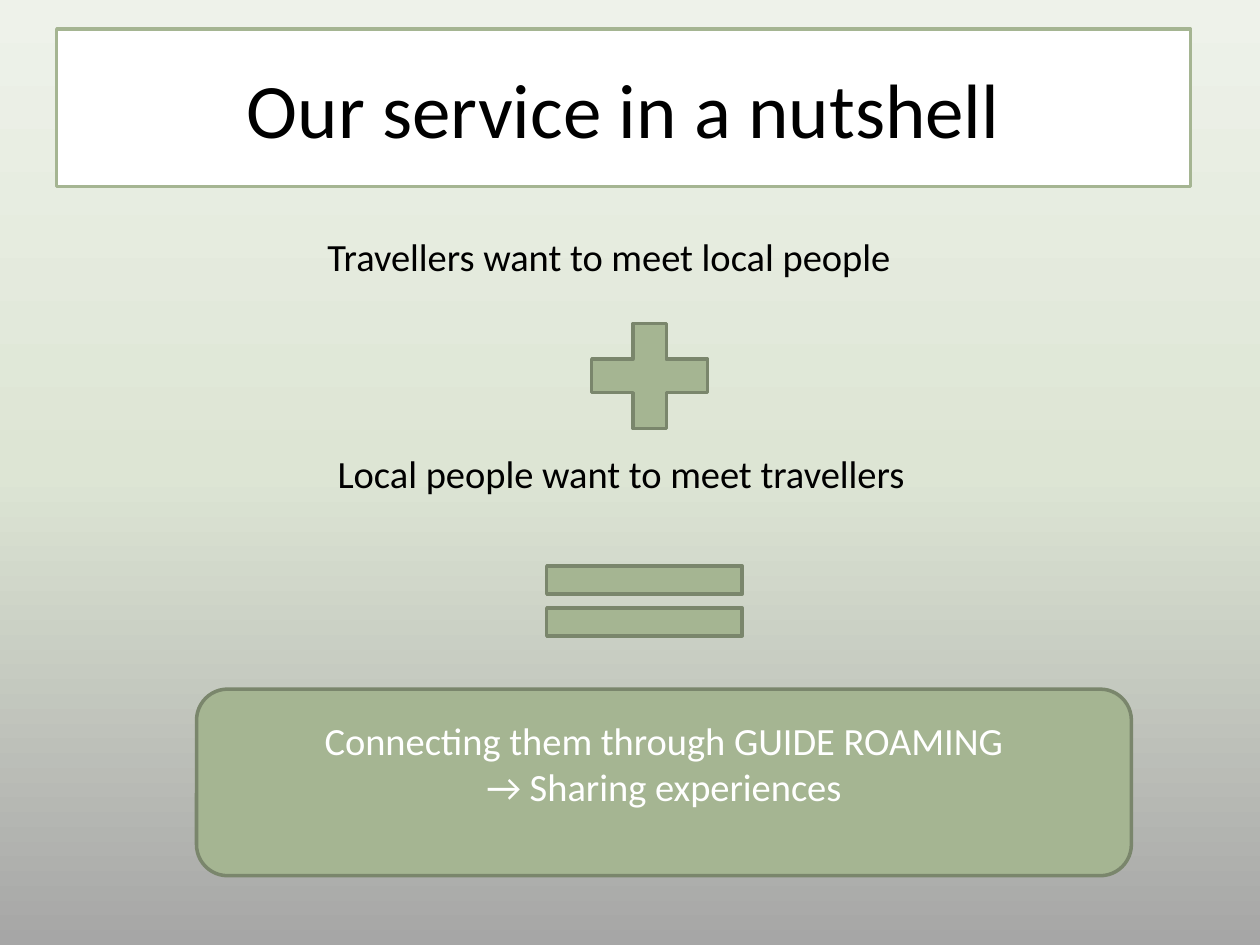
from copy import deepcopy
from dataclasses import dataclass

from pptx import Presentation
from pptx.dml.color import RGBColor
from pptx.enum.shapes import MSO_SHAPE
from pptx.enum.text import MSO_ANCHOR, MSO_AUTO_SIZE, PP_ALIGN
from pptx.util import Pt

PLUS, EQUALS = MSO_SHAPE.MATH_PLUS, MSO_SHAPE.MATH_EQUAL
ROUNDED = MSO_SHAPE.ROUNDED_RECTANGLE
LEFT, CENTER = PP_ALIGN.LEFT, PP_ALIGN.CENTER
MIDDLE, TOP = MSO_ANCHOR.MIDDLE, MSO_ANCHOR.TOP
GROW = MSO_AUTO_SIZE.SHAPE_TO_FIT_TEXT


@dataclass(frozen=True)
class Theme:
    font: str = "Calibri"
    title_size: int = 44
    body_size: int = 22
    ink: str = "000000"
    paper: str = "FFFFFF"
    sage: str = "A5B592"
    outline: str = "7A866C"
    line_width: int = 2
    # Background colours from the bottom edge to the top edge
    backdrop: tuple = ("A6A6A6", "DDE5D4", "EEF2EA")


def write(frame, text, *, font, size, color, align=LEFT, anchor=TOP):
    """Fill a text frame, one paragraph per line of text."""
    frame.text = text
    frame.word_wrap = True
    frame.vertical_anchor = anchor
    for paragraph in frame.paragraphs:
        paragraph.alignment = align
        for run in paragraph.runs:
            run.font.name = font
            run.font.size = Pt(size)
            run.font.color.rgb = RGBColor.from_string(color)


class SlideBuilder:
    def __init__(self, slide, theme):
        self.slide = slide
        self.theme = theme

    def background(self):
        fill = self.slide.background.fill
        fill.gradient()
        fill.gradient_angle = 90
        # The default gradient has two stops; add the middle one
        first_stop = self.slide.element.xpath(".//p:bg//a:gs")[0]
        first_stop.addnext(deepcopy(first_stop))
        colors = self.theme.backdrop
        for index, (stop, color) in enumerate(zip(fill.gradient_stops, colors)):
            stop.color.rgb = RGBColor.from_string(color)
            stop.position = index / (len(colors) - 1)

    def paint(self, shape, fill, line):
        shape.fill.solid()
        shape.fill.fore_color.rgb = RGBColor.from_string(fill)
        shape.line.color.rgb = RGBColor.from_string(line)
        shape.line.width = Pt(self.theme.line_width)

    def title(self, text, left, top, width, height):
        heading = self.slide.shapes.title
        heading.left, heading.top = Pt(left), Pt(top)
        heading.width, heading.height = Pt(width), Pt(height)
        self.paint(heading, self.theme.paper, self.theme.sage)
        write(heading.text_frame, text, font=self.theme.font,
              size=self.theme.title_size, color=self.theme.ink,
              align=CENTER, anchor=MIDDLE)

    def shape(self, kind, left, top, width, height):
        shape = self.slide.shapes.add_shape(
            kind, Pt(left), Pt(top), Pt(width), Pt(height))
        shape.shadow.inherit = False
        self.paint(shape, self.theme.sage, self.theme.outline)
        return shape

    def result(self, text, left, top, width, height, space_below):
        panel = self.shape(ROUNDED, left, top, width, height)
        write(panel.text_frame, text, font=self.theme.font,
              size=self.theme.body_size, color=self.theme.paper,
              align=CENTER, anchor=MIDDLE)
        panel.text_frame.margin_bottom = Pt(space_below)

    def statement(self, text, left, top, width, height):
        box = self.slide.shapes.add_textbox(
            Pt(left), Pt(top), Pt(width), Pt(height))
        write(box.text_frame, text, font=self.theme.font,
              size=self.theme.body_size, color=self.theme.ink)
        box.text_frame.auto_size = GROW


def main():
    deck = Presentation()
    deck.slide_width, deck.slide_height = Pt(720), Pt(540)
    title_only = deck.slide_layouts[5]
    builder = SlideBuilder(deck.slides.add_slide(title_only), Theme())

    # Backdrop and heading
    builder.background()
    builder.title("Our service in a nutshell", 32.4, 16.6, 648, 90)

    # Operators of the equation
    builder.shape(PLUS, 326.2, 174.2, 90, 81.4)
    builder.shape(EQUALS, 292.3, 309.6, 152, 67.7)

    # Outcome
    builder.result("Connecting them through GUIDE ROAMING\n→ Sharing experiences",
                   112.3, 393.8, 534.2, 106.6, space_below=25.6)

    # The two needs being added
    builder.statement("Local people want to meet travellers", 185.8, 253.4, 365.8, 55.4)
    builder.statement("Travellers want to meet local people", 180, 129.6, 393.8, 55.4)

    deck.save("out.pptx")


if __name__ == "__main__":
    main()
